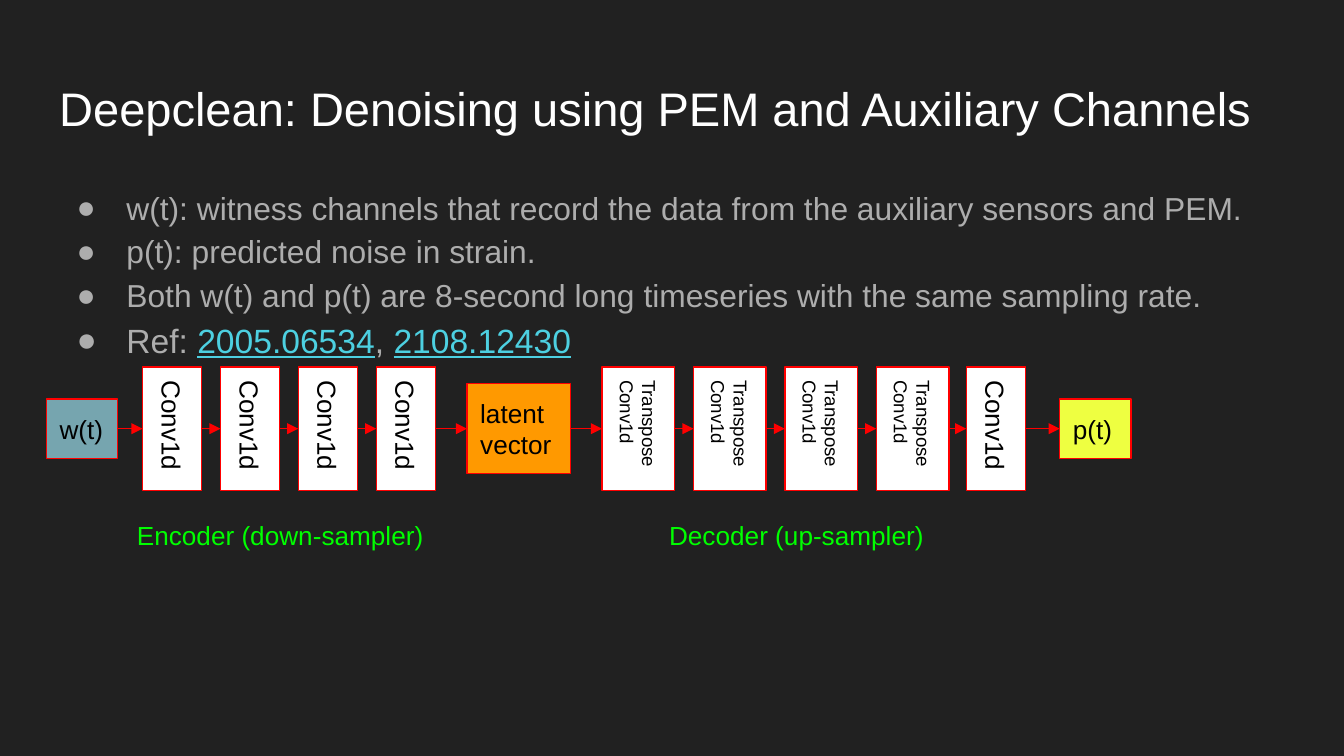
"""Build a slide on the Deepclean denoising autoencoder."""
import pptx
import pptx.dml.color
import pptx.enum.shapes
import pptx.enum.text
import pptx.oxml.ns
import pptx.util
from lxml import etree
from pptx.util import Inches

COLORS = {
    "background": "212121", "title": "FFFFFF", "body": "ADADAD",
    "reference": "4DD0E1", "outline": "FF0000", "layer": "FFFFFF",
    "witness": "76A5AF", "latent": "FF9900", "prediction": "EEFF41",
    "label": "000000", "caption": "00FF00",
}
FACTS = [
    "w(t): witness channels that record the data from the auxiliary sensors and PEM.",
    "p(t): predicted noise in strain.",
    "Both w(t) and p(t) are 8-second long timeseries with the same sampling rate.",
]
REFERENCES = [("Ref: ", False), ("2005.06534", True), (", ", False), ("2108.12430", True)]
AXIS_Y = 3.19
LAYER_LENGTH = 0.92


def rgb(name):
    return pptx.dml.color.RGBColor.from_string(COLORS[name])


def add_xml(parent, tag, **attributes):
    return etree.SubElement(parent, pptx.oxml.ns.qn(tag), attributes)


def style_run(run, size, color):
    run.font.name = "Arial"
    run.font.size = pptx.util.Pt(size)
    run.font.color.rgb = rgb(color)


def prepare_frame(frame, anchor):
    frame.word_wrap = True
    frame.auto_size = pptx.enum.text.MSO_AUTO_SIZE.NONE
    frame.vertical_anchor = anchor
    frame.margin_left = frame.margin_right = Inches(0.1)
    frame.margin_top = frame.margin_bottom = Inches(0.1)


def write_text(shape, text, size, color):
    frame = shape.text_frame
    prepare_frame(frame, pptx.enum.text.MSO_ANCHOR.MIDDLE)
    frame.text = text
    paragraph = frame.paragraphs[0]
    paragraph.alignment = pptx.enum.text.PP_ALIGN.LEFT
    for run in paragraph.runs:
        style_run(run, size, color)


def place(shape, left, top, width, height):
    shape.left, shape.top = Inches(left), Inches(top)
    shape.width, shape.height = Inches(width), Inches(height)


def format_bullet(paragraph):
    paragraph.line_spacing = 1.15
    paragraph.space_before = pptx.util.Pt(0)
    properties = paragraph._p.get_or_add_pPr()
    properties.set("marL", str(Inches(0.5)))
    properties.set("indent", str(Inches(-0.37)))
    bullet_color = add_xml(properties, "a:buClr")
    add_xml(bullet_color, "a:srgbClr", val=COLORS["body"])
    add_xml(properties, "a:buFont", typeface="Arial")
    add_xml(properties, "a:buChar", char="●")


def fill_body(body):
    frame = body.text_frame
    prepare_frame(frame, pptx.enum.text.MSO_ANCHOR.TOP)
    frame.text = "\n".join(FACTS)
    for fact in frame.paragraphs:
        style_run(fact.runs[0], 17, "body")
    references = frame.add_paragraph()
    for text, is_reference in REFERENCES:
        run = references.add_run()
        run.text = text
        style_run(run, 18, "reference" if is_reference else "body")
        run.font.underline = is_reference
    for paragraph in frame.paragraphs:
        format_bullet(paragraph)


def add_stage(diagram, text, center, width, height, fill, size=14, turned=False):
    if turned:
        width, height = height, width
    stage = diagram.shapes.add_shape(
        pptx.enum.shapes.MSO_SHAPE.RECTANGLE,
        Inches(center - width / 2), Inches(AXIS_Y - height / 2),
        Inches(width), Inches(height))
    stage.rotation = 90 if turned else 0
    stage.shadow.inherit = False
    stage.fill.solid()
    stage.fill.fore_color.rgb = rgb(fill)
    stage.line.color.rgb = rgb("outline")
    stage.line.width = pptx.util.Pt(0.75)
    write_text(stage, text, size, "label")


def add_arrow(diagram, start, end):
    arrow = diagram.shapes.add_connector(
        pptx.enum.shapes.MSO_CONNECTOR.STRAIGHT,
        Inches(start), Inches(AXIS_Y), Inches(end), Inches(AXIS_Y))
    arrow.line.color.rgb = rgb("outline")
    arrow.line.width = pptx.util.Pt(0.75)
    add_xml(arrow.line._get_or_add_ln(), "a:tailEnd", type="triangle")
    add_xml(arrow._element.spPr, "a:effectLst")


def add_caption(diagram, text, left):
    caption = diagram.shapes.add_textbox(
        Inches(left), Inches(3.76), Inches(2.46), Inches(0.44))
    write_text(caption, text, 14, "caption")


def add_network(diagram):
    encoder = [("Conv1d", 1.28 + 0.58 * i, 0.44, LAYER_LENGTH, "layer", 14, True)
               for i in range(4)]
    decoder = [("Transpose\vConv1d", 4.75 + 0.68 * i, 0.54, LAYER_LENGTH, "layer", 10, True)
               for i in range(4)]
    stages = [
        ("w(t)", 0.61, 0.53, 0.44, "witness"),
        *encoder,
        ("latent vector", 3.86, 0.77, 0.67, "latent"),
        *decoder,
        ("Conv1d", 7.41, 0.44, LAYER_LENGTH, "layer", 14, True),
        ("p(t)", 8.15, 0.53, 0.44, "prediction"),
    ]
    for stage in stages:
        add_stage(diagram, *stage)
    for (_, center, width, *_), (_, next_center, next_width, *_) in zip(stages, stages[1:]):
        add_arrow(diagram, center + width / 2, next_center - next_width / 2)


def main():
    presentation = pptx.Presentation()
    presentation.slide_width = Inches(10)
    presentation.slide_height = Inches(10) * 9 // 16
    slide = presentation.slides.add_slide(presentation.slide_layouts[1])
    slide.background.fill.solid()
    slide.background.fill.fore_color.rgb = rgb("background")

    title, body = slide.placeholders
    place(title, 0.34, 0.49, 9.32, 0.63)
    write_text(title, "Deepclean: Denoising using PEM and Auxiliary Channels", 25.2, "title")
    place(body, 0.34, 1.26, 9.32, 3.74)
    fill_body(body)

    diagram = slide.shapes.add_group_shape()
    add_network(diagram)
    add_caption(diagram, "Encoder (down-sampler)", 0.92)
    add_caption(diagram, "Decoder (up-sampler)", 4.88)
    presentation.save("out.pptx")


if __name__ == "__main__":
    main()
